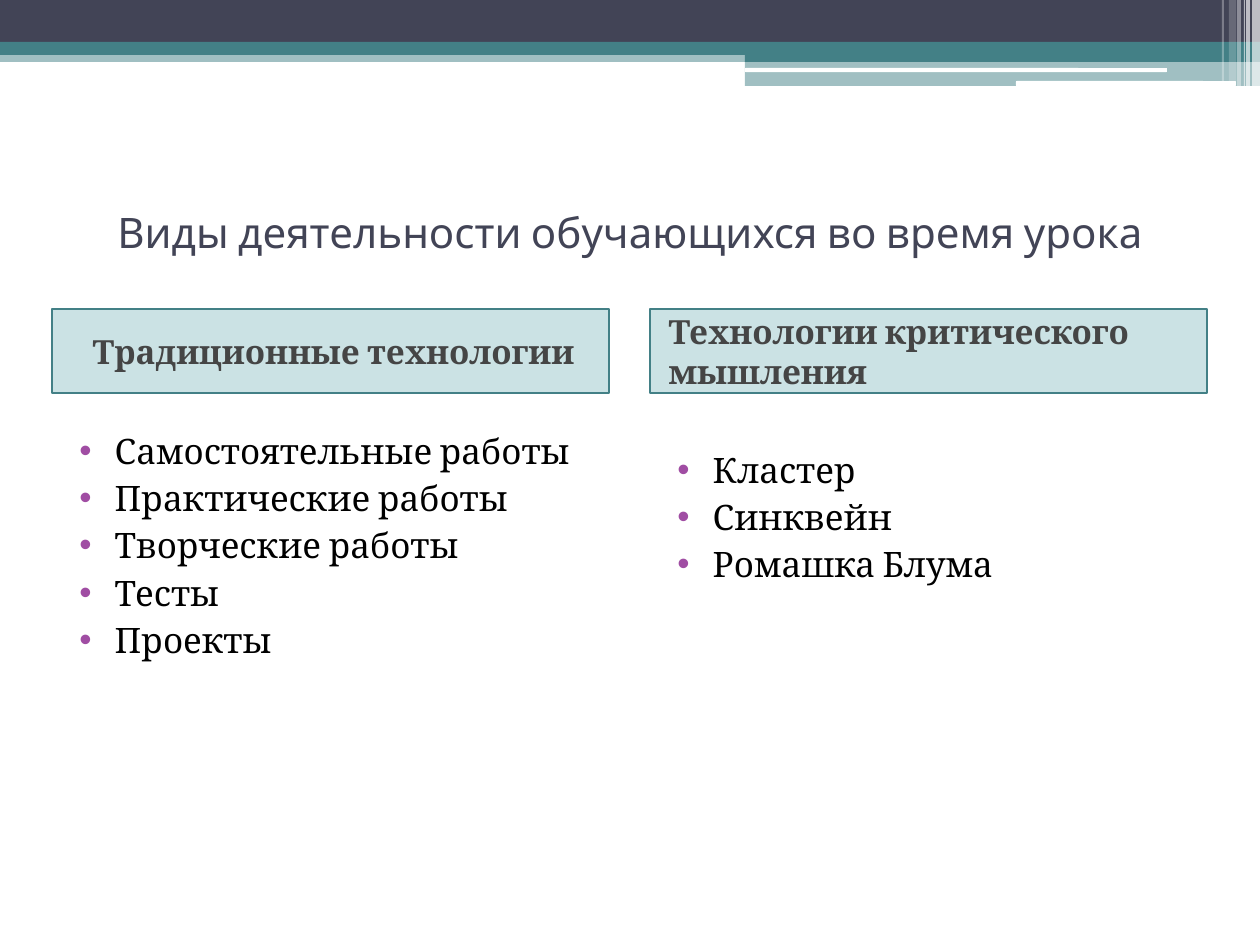
from lxml import etree
from pptx import Presentation
from pptx import util as u
from pptx.dml.color import RGBColor
from pptx.enum import shapes, text
from pptx.oxml.ns import qn

PX_PER_INCH = 126
TITLE = "Виды деятельности обучающихся во время урока"
LEFT, RIGHT, COLUMN_WIDTH = 52, 650, 557
CENTER, START = text.PP_ALIGN.CENTER, text.PP_ALIGN.LEFT

# heading, its alignment, left, top of the list, list items
COLUMNS = [
    ("Традиционные технологии", CENTER, LEFT, 423,
     ["Самостоятельные работы", "Практические работы", "Творческие работы",
      "Тесты", "Проекты"]),
    ("Технологии критического мышления", START, RIGHT, 442,
     ["Кластер", "Синквейн", "Ромашка Блума"]),
]
LIST_BOTTOM = 909

# left, top, width, height, colour, opacity in percent
BANDS = [
    (0, 50, 1260, 12, "438086", 50),
    (0, 0, 1260, 42, "424456", 100),
    (0, 42, 1260, 13, "438086", 100),
    (745, 49, 515, 13, "438086", 100),
    (745, 61, 515, 25, "438086", 50),
]
ROUNDED_LINES = [
    (745, 68, 422, 4, "FFFFFF", 100),
    (1016, 81, 220, 5, "FFFFFF", 100),
]
# left, width, height, opacity in percent
STRIPES = [(1252, 8, 86, 65), (1246, 4, 86, 65), (1244, 1, 86, 60),
           (1237, 4, 86, 40), (1229, 7, 81, 20), (1222, 2, 81, 30)]


def px(value):
    return u.Emu(round(value * 914400 / PX_PER_INCH))


def color(value):
    return RGBColor.from_string(value)


def fill_shape(shape, value, opacity):
    shape.shadow.inherit = False
    shape.fill.solid()
    shape.fill.fore_color.rgb = color(value)
    if opacity < 100:
        tone = shape.fill._xPr.find(".//" + qn("a:srgbClr"))
        etree.SubElement(tone, qn("a:alpha"), val=str(opacity * 1000))


def add_block(page, kind, left, top, width, height, value, opacity):
    shape = page.shapes.add_shape(kind, px(left), px(top), px(width), px(height))
    fill_shape(shape, value, opacity)
    shape.line.fill.background()
    return shape


def format_para(para, font, size, value, align, bold=False):
    para.alignment = align
    for span in para.runs:
        span.font.name = font
        span.font.size = u.Pt(size)
        span.font.bold = bold
        span.font.color.rgb = color(value)


def set_indent(para, margin, first_line):
    """Indent in inches, as in the ruler."""
    props = para._p.get_or_add_pPr()
    props.set("marL", str(u.Inches(margin)))
    props.set("indent", str(u.Inches(first_line)))
    para.space_before = u.Pt(3)
    return props


def add_bullet(props, value):
    tint = etree.SubElement(props, qn("a:buClr"))
    etree.SubElement(tint, qn("a:srgbClr"), val=value)
    etree.SubElement(props, qn("a:buFont"), typeface="Arial")
    etree.SubElement(props, qn("a:buChar"), char="•")


def add_heading(page, words, align, left):
    box = add_block(page, shapes.MSO_SHAPE.RECTANGLE,
                    left, 309, COLUMN_WIDTH, 84, "328E97", 25)
    box.line.color.rgb = color("438086")
    box.line.width = u.Pt(1)
    frame = box.text_frame
    frame.text = words
    frame.word_wrap = True
    frame.vertical_anchor = text.MSO_ANCHOR.MIDDLE
    para = frame.paragraphs[0]
    format_para(para, "Cambria", 19, "454545", align, bold=True)
    set_indent(para, 0.05, 0)


def add_list(page, items, left, top):
    box = page.shapes.add_textbox(px(left), px(top), px(COLUMN_WIDTH),
                                  px(LIST_BOTTOM - top))
    frame = box.text_frame
    frame.word_wrap = True
    frame.text = "\n".join(items)
    for para in frame.paragraphs:
        format_para(para, "Cambria", 20, "000000", START)
        add_bullet(set_indent(para, 0.4, -0.28), "A04DA3")


def set_title(page):
    title = page.shapes.title
    title.left, title.top, title.width, title.height = map(px, (LEFT, 158, 1156, 147))
    frame = title.text_frame
    frame.text = TITLE
    frame.word_wrap = True
    frame.vertical_anchor = text.MSO_ANCHOR.MIDDLE
    format_para(frame.paragraphs[0], "Cabin", 24, "424456", CENTER)


def main():
    deck = Presentation()
    deck.slide_width, deck.slide_height = px(1260), px(945)
    page = deck.slides.add_slide(deck.slide_layouts[5])
    for band in BANDS:
        add_block(page, shapes.MSO_SHAPE.RECTANGLE, *band)
    for line in ROUNDED_LINES:
        add_block(page, shapes.MSO_SHAPE.ROUNDED_RECTANGLE, *line)
    for left, width, height, opacity in STRIPES:
        add_block(page, shapes.MSO_SHAPE.RECTANGLE,
                  left, 0, width, height, "FFFFFF", opacity)
    set_title(page)
    for heading, align, left, top, items in COLUMNS:
        add_heading(page, heading, align, left)
        add_list(page, items, left, top)
    deck.save("out.pptx")


if __name__ == "__main__":
    main()
